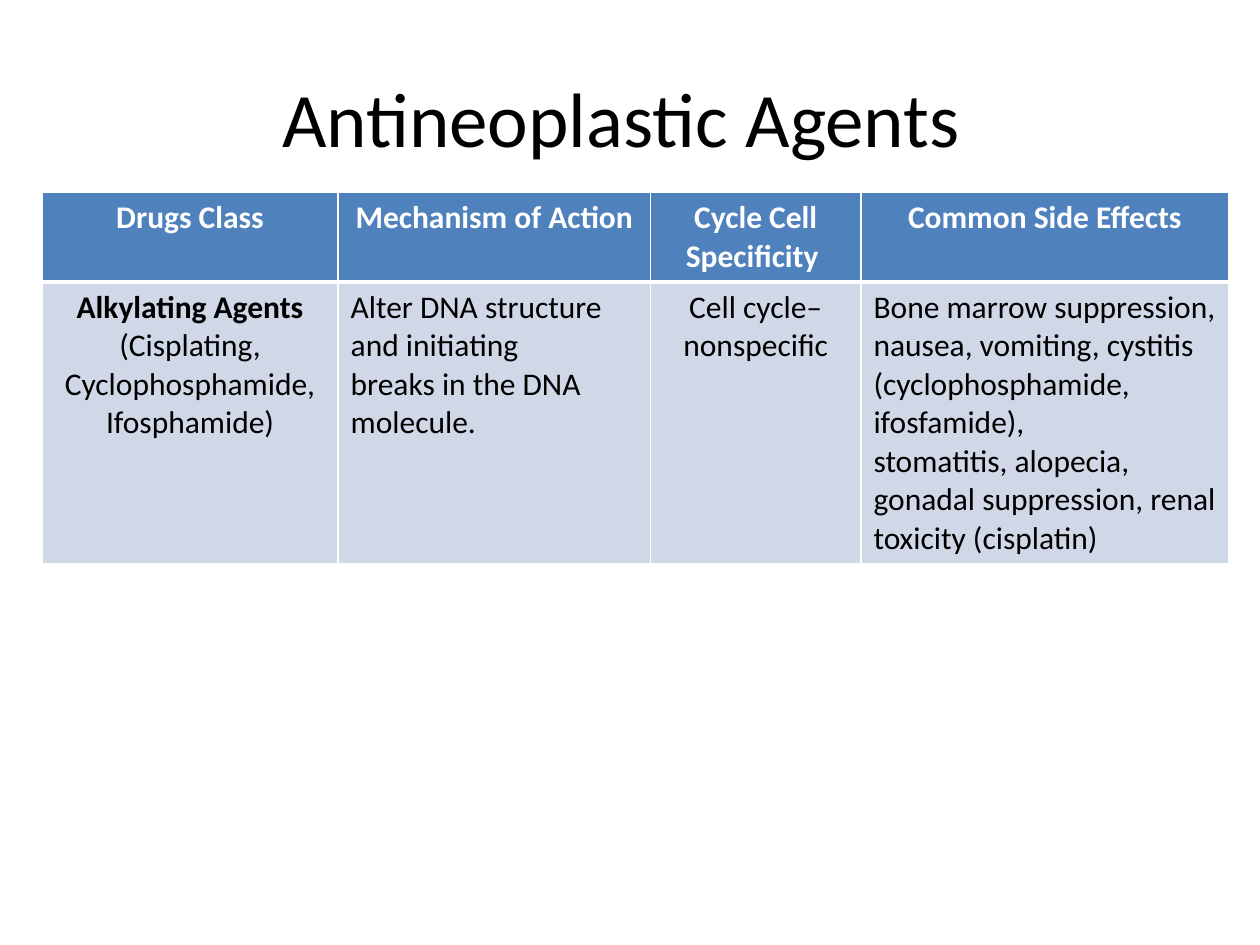
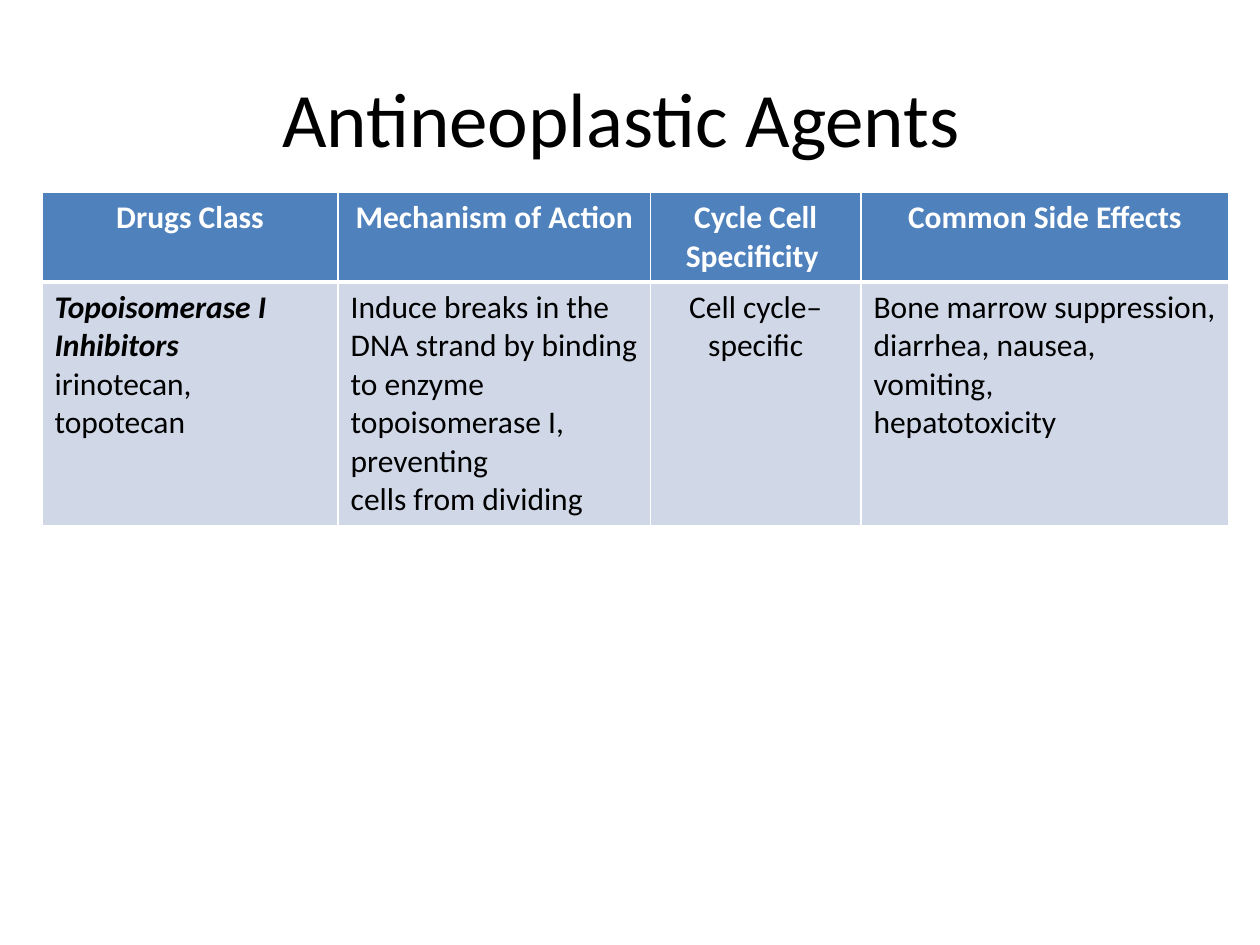
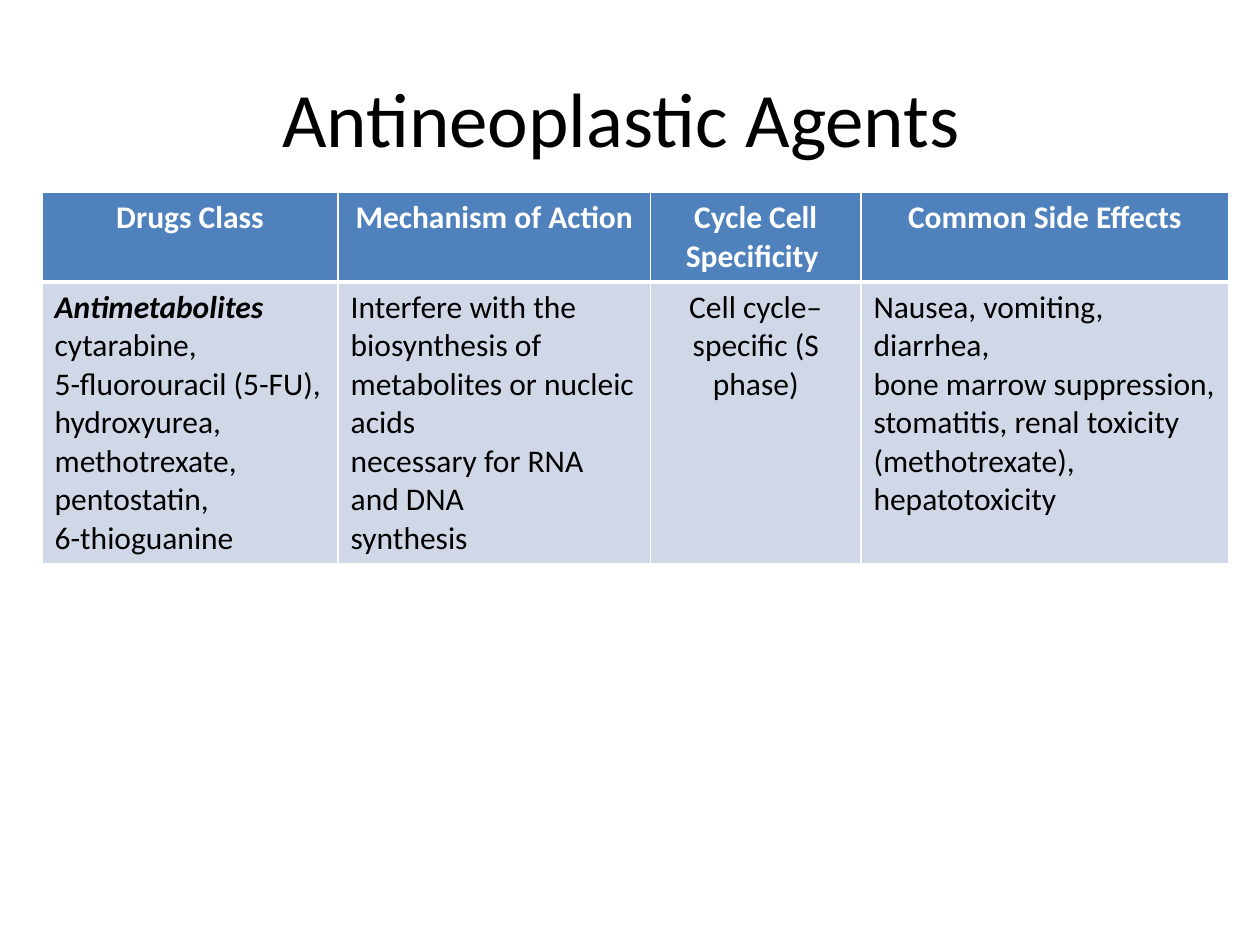
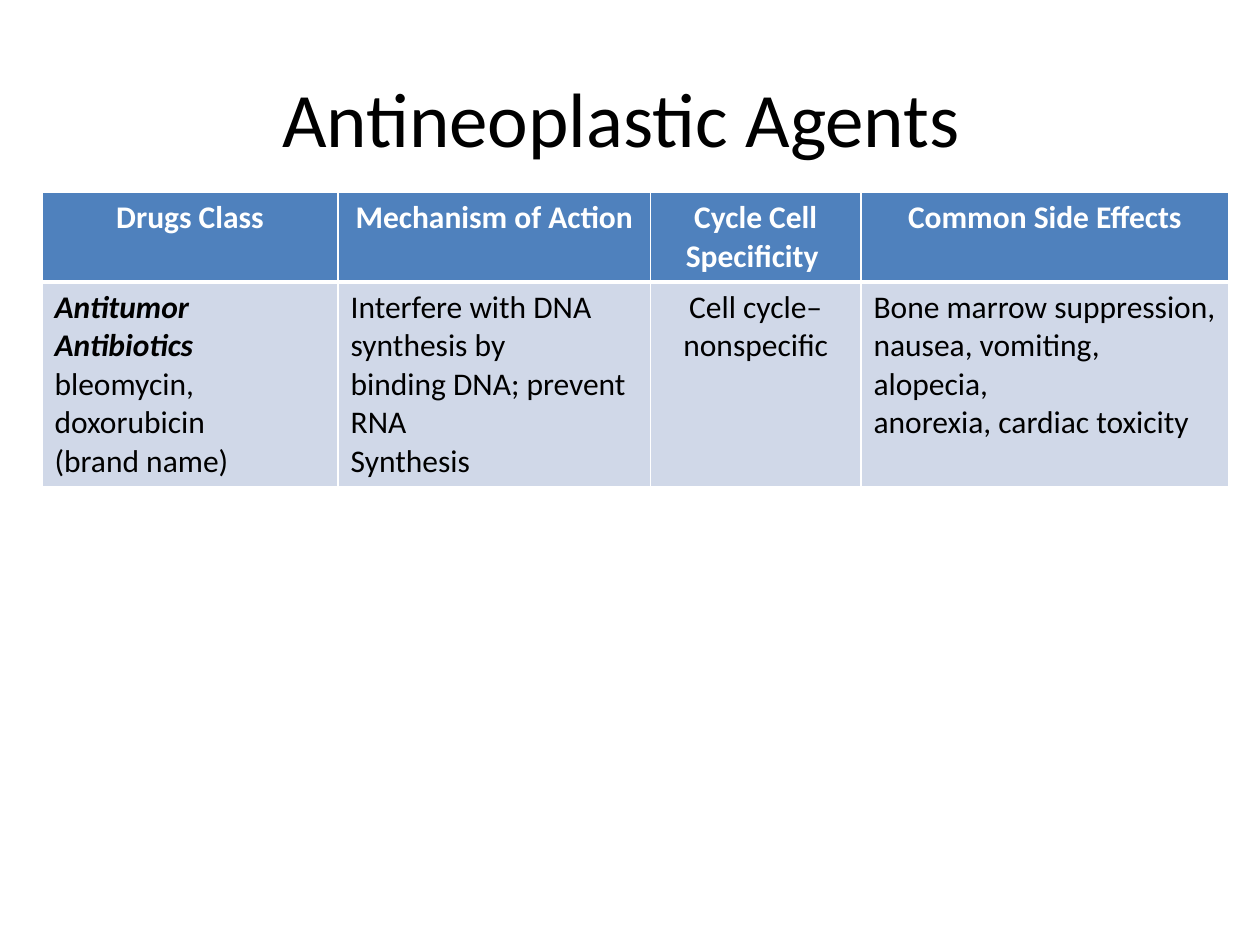
"""Build four slides that tabulate classes of antineoplastic agents."""
from lxml import etree
from pptx import Presentation
from pptx.dml.color import RGBColor
from pptx.enum.text import MSO_ANCHOR, PP_ALIGN
from pptx.oxml.ns import qn
from pptx.util import Pt

LEFT, CENTER = PP_ALIGN.LEFT, PP_ALIGN.CENTER
MIDDLE = MSO_ANCHOR.MIDDLE
FONT = "Calibri"
COLORS = {"text": "000000", "light": "FFFFFF", "header": "4F81BD", "body": "D0D8E8"}
TITLE_ONLY = 5
TITLE = "Antineoplastic Agents "
TITLE_BOX = (36, 21.6, 648, 90)
TABLE_LEFT, TABLE_TOP = 24, 110
ROW_HEIGHT = 29.5
COLUMN_WIDTHS = (169.2, 178.56, 120.24, 210.24)
COLUMN_ALIGNMENTS = (LEFT, LEFT, CENTER, LEFT)
HEADERS = ("Drugs Class", "Mechanism of Action", "Cycle Cell Specificity ",
           "Common Side Effects")
BOLD = {"bold": True}
BOLD_ITALIC = {"bold": True, "italic": True}

DRUG_CLASSES = [
    {
        "height": 252,
        "class_alignment": CENTER,
        "cells": [
            [[("Alkylating Agents ", BOLD),
              ("(Cisplating, Cyclophosphamide, Ifosphamide)", {})]],
            ["Alter DNA structure and initiating", "breaks in the DNA molecule."],
            ["Cell cycle–nonspecific"],
            ["Bone marrow suppression,", "nausea, vomiting, cystitis",
             "(cyclophosphamide, ifosfamide),", "stomatitis, alopecia,",
             "gonadal suppression, renal", "toxicity (cisplatin)"],
        ],
    },
    {
        "height": 187.2,
        "cells": [
            [[("Topoisomerase I Inhibitors", BOLD_ITALIC)], "irinotecan, topotecan"],
            ["Induce breaks in the DNA strand by binding to enzyme",
             "topoisomerase I, preventing", "cells from dividing"],
            ["Cell cycle–specific"],
            ["Bone marrow suppression,", "diarrhea, nausea, vomiting,",
             "hepatotoxicity"],
        ],
    },
    {
        "height": 208.8,
        "cells": [
            [[("Antimetabolites", BOLD_ITALIC)], "cytarabine,",
             "5-fluorouracil (5-FU),", "hydroxyurea,",
             "methotrexate, pentostatin,", "6-thioguanine"],
            ["Interfere with the biosynthesis of", "metabolites or nucleic acids",
             "necessary for RNA and DNA", "synthesis"],
            ["Cell cycle–specific (S phase)"],
            ["Nausea, vomiting, diarrhea,", "bone marrow suppression,",
             "stomatitis, renal toxicity", "(methotrexate), hepatotoxicity"],
        ],
    },
    {
        "height": 165.6,
        "cells": [
            [[("Antitumor Antibiotics", BOLD_ITALIC)], "bleomycin, doxorubicin",
             "(brand name)"],
            ["Interfere with DNA synthesis by", "binding DNA; prevent RNA",
             "Synthesis"],
            ["Cell cycle–nonspecific"],
            ["Bone marrow suppression,", "nausea, vomiting, alopecia,",
             "anorexia, cardiac toxicity"],
        ],
    },
]


def add_text(paragraph, text, size=18, color="text", bold=False, italic=False):
    """Append one formatted run to a paragraph."""
    run = paragraph.add_run()
    run.text = text
    run.font.name = FONT
    run.font.size = Pt(size)
    run.font.bold = bold
    run.font.italic = italic
    run.font.color.rgb = RGBColor.from_string(COLORS[color])


def add_title(slide):
    """Place and fill the title placeholder."""
    title = slide.shapes.title
    title.left, title.top, title.width, title.height = map(Pt, TITLE_BOX)
    title.text_frame.vertical_anchor = MIDDLE
    paragraph = title.text_frame.paragraphs[0]
    paragraph.alignment = CENTER
    add_text(paragraph, TITLE, size=44)


def set_borders(cell, bottom_width):
    """Draw light borders around a cell, with its own bottom width."""
    properties = cell._tc.get_or_add_tcPr()
    widths = {"a:lnL": 1, "a:lnR": 1, "a:lnT": 1, "a:lnB": bottom_width}
    for position, (tag, width) in enumerate(widths.items()):
        line = etree.Element(qn(tag), w=str(Pt(width)))
        fill = etree.SubElement(line, qn("a:solidFill"))
        etree.SubElement(fill, qn("a:srgbClr"), val=COLORS["light"])
        properties.insert(position, line)


def fill_cell(cell, paragraphs, fill, alignment, bottom_width=1, **text_format):
    """Fill a cell with paragraphs, each a string or a list of (text, format) runs."""
    cell.fill.solid()
    cell.fill.fore_color.rgb = RGBColor.from_string(COLORS[fill])
    set_borders(cell, bottom_width)
    for index, content in enumerate(paragraphs):
        frame = cell.text_frame
        paragraph = frame.add_paragraph() if index else frame.paragraphs[0]
        paragraph.alignment = alignment
        runs = [(content, text_format)] if isinstance(content, str) else content
        for text, run_format in runs:
            add_text(paragraph, text, **run_format)


def add_drug_table(slide, drug_class):
    """Add the table of one drug class under the shared header row."""
    frame = slide.shapes.add_table(
        2, len(HEADERS), Pt(TABLE_LEFT), Pt(TABLE_TOP),
        Pt(sum(COLUMN_WIDTHS)), Pt(2 * ROW_HEIGHT))
    table = frame.table
    table.horz_banding = False
    for column, width in zip(table.columns, COLUMN_WIDTHS):
        column.width = Pt(width)
    for row in table.rows:
        row.height = Pt(ROW_HEIGHT)
    frame.height = Pt(drug_class["height"])
    alignments = (drug_class.get("class_alignment", LEFT),) + COLUMN_ALIGNMENTS[1:]
    for index, header in enumerate(HEADERS):
        fill_cell(table.cell(0, index), [header], "header", CENTER,
                  bottom_width=3, color="light", bold=True)
        fill_cell(table.cell(1, index), drug_class["cells"][index], "body",
                  alignments[index])


def main():
    """Build and save the presentation."""
    presentation = Presentation()
    presentation.slide_width, presentation.slide_height = Pt(720), Pt(540)
    for drug_class in DRUG_CLASSES:
        slide = presentation.slides.add_slide(presentation.slide_layouts[TITLE_ONLY])
        add_title(slide)
        add_drug_table(slide, drug_class)
    presentation.save("out.pptx")


if __name__ == "__main__":
    main()
